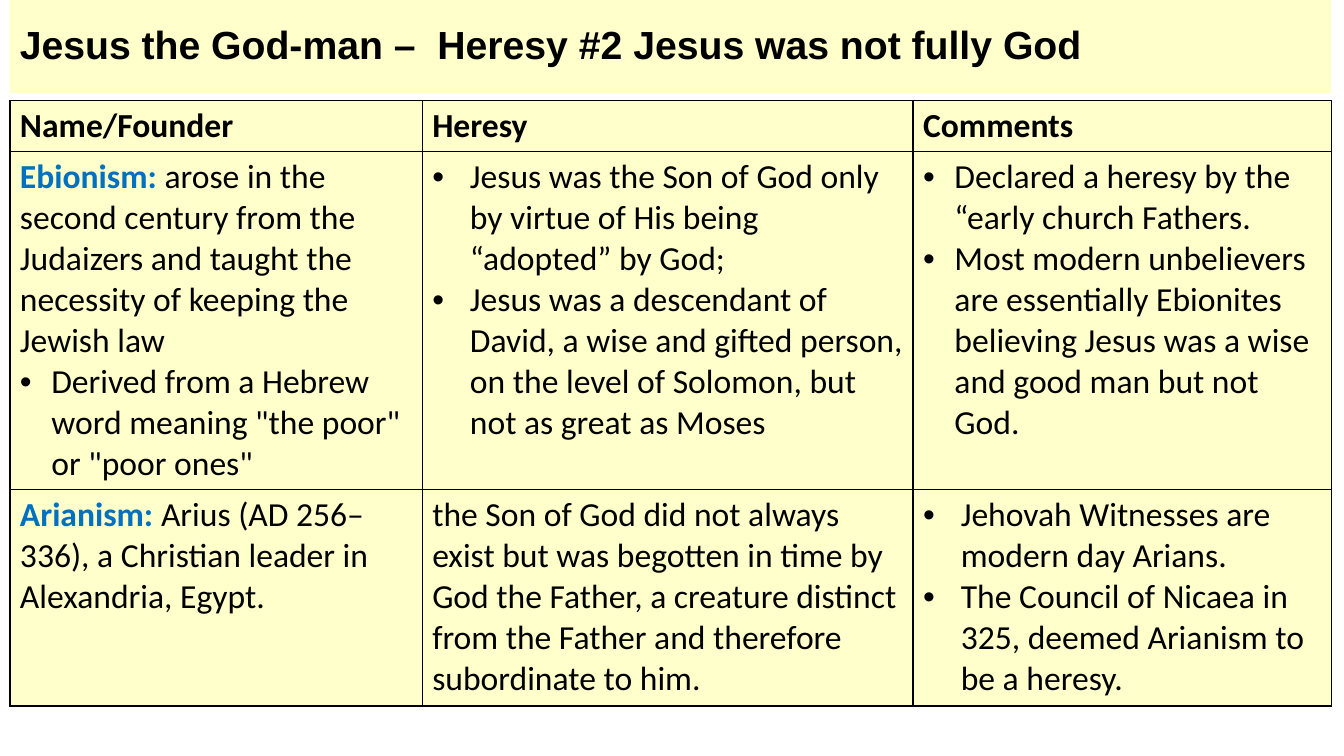
from lxml.etree import SubElement
from pptx import Presentation
from pptx.dml.color import RGBColor
from pptx.enum.text import MSO_ANCHOR, PP_ALIGN
from pptx.oxml.ns import qn
from pptx.util import Cm, Pt

BLACK = RGBColor(0x00, 0x00, 0x00)
BLUE = RGBColor(0x00, 0x70, 0xC0)
CREAM = RGBColor(0xFF, 0xFF, 0xCC)

LEFT, WIDTH = 0.25, 33.3
COLUMNS = [10.39, 12.37, 10.54]
ROW_HEIGHTS = [1.28, 8.52, 5.45]
NARROW, WIDE = 0.79, 0.95

HEADER = ["Name/Founder", "Heresy", "Comments"]
HERESIES = [
    [
        [("Ebionism: ", "arose in the second century from the Judaizers and taught "
          "the necessity of keeping the Jewish law", 0),
         ("", 'Derived from a Hebrew word meaning "the poor" or "poor ones"', NARROW)],
        [("", "Jesus was the Son of God only by virtue of His being “adopted” by God;", WIDE),
         ("", "Jesus was a descendant of David, a wise and gifted person, on the level "
          "of Solomon, but not as great as Moses", WIDE)],
        [("", "Declared a heresy by the “early church Fathers.", NARROW),
         ("", "Most modern unbelievers are essentially Ebionites believing Jesus was "
          "a wise and good man but not God.", NARROW)],
    ],
    [
        [("Arianism: ", "Arius (AD 256–336), a Christian leader in Alexandria, Egypt.", 0)],
        [("", "the Son of God did not always exist but was begotten in time by God the "
          "Father, a creature distinct from the Father and therefore subordinate to him.", 0)],
        [("", "Jehovah Witnesses are modern day Arians.", WIDE),
         ("", "The Council of Nicaea in 325, deemed Arianism to be a heresy.", WIDE)],
    ],
]


class HeresySlide:
    """Holds the slide and its style, with a method for each kind of element."""

    def __init__(self, prs):
        self.s = prs.slides.add_slide(prs.slide_layouts[6])
        self.body_font, self.body_size = "Calibri", 24
        self.title_font, self.title_size = "Arial", 28

    def style(self, r, font, size, color=BLACK, bold=False):
        r.font.name, r.font.size = font, Pt(size)
        r.font.bold, r.font.color.rgb = bold, color

    def title(self, text, height):
        sp = self.s.shapes.add_textbox(Cm(LEFT), Cm(0), Cm(WIDTH), Cm(height))
        sp.fill.solid()
        sp.fill.fore_color.rgb = CREAM
        tf = sp.text_frame
        tf.word_wrap = True
        tf.vertical_anchor = MSO_ANCHOR.MIDDLE
        tf.text = text
        p = tf.paragraphs[0]
        p.alignment, p.line_spacing = PP_ALIGN.LEFT, 0.9
        self.style(p.runs[0], self.title_font, self.title_size, bold=True)

    def bullet(self, p, indent):
        pPr = p._p.get_or_add_pPr()
        pPr.set("marL", str(Cm(indent)))
        pPr.set("indent", str(-Cm(indent)))
        SubElement(pPr, qn("a:buFont"), typeface="Arial")
        SubElement(pPr, qn("a:buChar"), char="•")

    def borders(self, cell):
        tcPr = cell._tc.get_or_add_tcPr()
        for side in ("lnL", "lnR", "lnT", "lnB"):
            ln = SubElement(tcPr, qn(f"a:{side}"), w=str(Pt(1)))
            fill = SubElement(ln, qn("a:solidFill"))
            SubElement(fill, qn("a:srgbClr"), val=str(BLACK))

    def cell(self, cell, paragraphs, name_color=BLUE):
        self.borders(cell)
        cell.fill.solid()
        cell.fill.fore_color.rgb = CREAM
        tf = cell.text_frame
        for i, (name, text, indent) in enumerate(paragraphs):
            p = tf.add_paragraph() if i else tf.paragraphs[0]
            if indent:
                self.bullet(p, indent)
            for part, color, bold in ((name, name_color, True), (text, BLACK, False)):
                if part:
                    r = p.add_run()
                    r.text = part
                    self.style(r, self.body_font, self.body_size, color, bold)

    def table(self, top, header, rows):
        frame = self.s.shapes.add_table(len(rows) + 1, len(header), Cm(LEFT), Cm(top),
                                        Cm(WIDTH), Cm(sum(ROW_HEIGHTS)))
        table = frame.table
        table.first_row = table.horz_banding = False
        for column, width in zip(table.columns, COLUMNS):
            column.width = Cm(width)
        for row, height in zip(table.rows, ROW_HEIGHTS):
            row.height = Cm(height)
        for c, label in enumerate(header):
            self.cell(table.cell(0, c), [(label, "", 0)], BLACK)
        for r, row in enumerate(rows, 1):
            for c, paragraphs in enumerate(row):
                self.cell(table.cell(r, c), paragraphs)


def main():
    prs = Presentation()
    prs.slide_width, prs.slide_height = Cm(33.87), Cm(19.05)
    slide = HeresySlide(prs)
    slide.title("Jesus the God-man –  Heresy #2 Jesus was not fully God", 2.34)
    slide.table(2.54, HEADER, HERESIES)
    prs.save("out.pptx")


if __name__ == "__main__":
    main()
